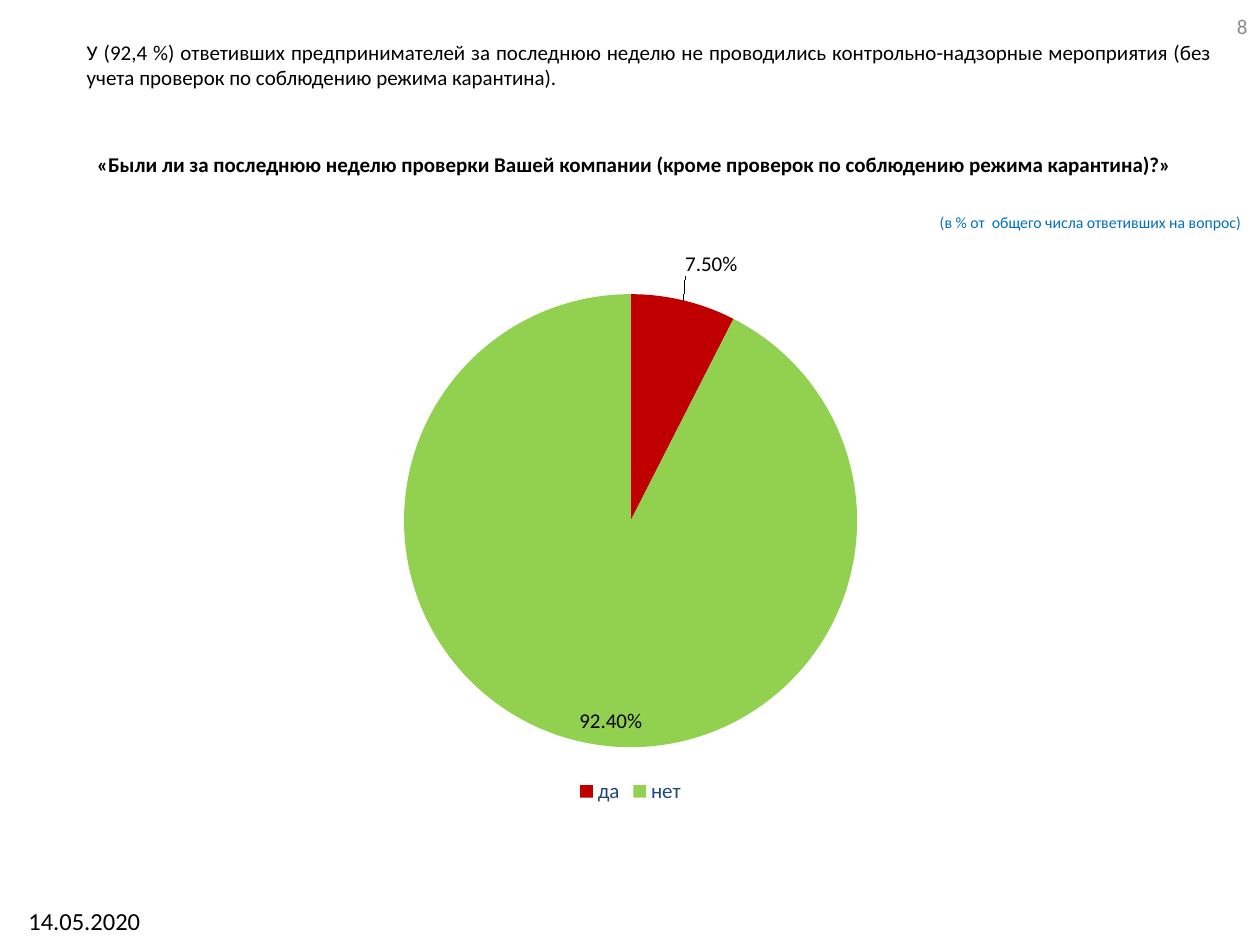
from dataclasses import dataclass

from lxml.etree import SubElement
from pptx import Presentation
from pptx.chart.data import CategoryChartData
from pptx.dml.color import RGBColor
from pptx.enum.chart import XL_CHART_TYPE, XL_LABEL_POSITION, XL_LEGEND_POSITION
from pptx.enum.text import MSO_ANCHOR, PP_ALIGN
from pptx.oxml import parse_xml
from pptx.oxml.ns import nsdecls, qn
from pptx.util import Pt

SCALE = 9144  # EMU per px, 100 px to the inch


@dataclass(frozen=True)
class Theme:
    face: str = "Calibri"
    ink: str = "000000"
    grey: str = "8C8C8C"
    blue: str = "0070C0"
    navy: str = "1F497D"
    red: str = "C00000"
    green: str = "92D050"
    small: int = 9
    body: int = 12
    large: int = 14


class Deck:
    def __init__(self, theme, wide, high):
        self.theme = theme
        self.file = Presentation()
        self.file.slide_width = wide * SCALE
        self.file.slide_height = high * SCALE
        self.slide = self.file.slides.add_slide(self.file.slide_layouts[6])

    def style(self, font, size, color, bold=False):
        form = {"name": self.theme.face, "size": Pt(size), "bold": bold}
        for name, value in form.items():
            setattr(font, name, value)
        font.color.rgb = RGBColor.from_string(color)

    def text(self, box, words, size, color, bold=False, wrap=True,
             align=PP_ALIGN.LEFT, anchor=MSO_ANCHOR.TOP, before=0):
        frame = self.slide.shapes.add_textbox(*(n * SCALE for n in box)).text_frame
        frame.word_wrap = wrap
        frame.vertical_anchor = anchor
        para = frame.paragraphs[0]
        para.alignment = align
        para.space_before = Pt(before)
        run = para.add_run()
        run.text = words
        self.style(run.font, size, color, bold)

    def layout(self, parent, index, **values):
        node = parse_xml(f"<c:layout {nsdecls('c')}><c:manualLayout/></c:layout>")
        for name, value in values.items():
            SubElement(node[0], qn(f"c:{name}")).set("val", str(value))
        parent.insert(index, node)

    def pie(self, box, slices, plot):
        look = self.theme
        data = CategoryChartData(number_format="0.00%")
        data.categories = [name for name, *_ in slices]
        data.add_series("Ответы", [value for _, value, *_ in slices])
        chart = self.slide.shapes.add_chart(
            XL_CHART_TYPE.PIE, *(n * SCALE for n in box), data).chart
        chart.has_title = False
        self.style(chart.font, look.body, look.ink)

        # Plot area
        area = chart.plots[0]
        area.vary_by_categories = True
        frame = chart._chartSpace.chart.plotArea
        for old in frame.findall(qn("c:layout")):
            frame.remove(old)
        self.layout(frame, 0, layoutTarget="inner", xMode="edge",
                    yMode="edge", **plot)

        # Slices and their labels
        series = area.series[0]
        tags = series.data_labels
        tags.show_value = True
        tags.number_format = "0.00%"
        tags.number_format_is_linked = False
        self.style(tags.font, look.body, look.ink)
        for spot, (_, _, color, place, lift) in enumerate(slices):
            point = series.points[spot]
            point.format.fill.solid()
            point.format.fill.fore_color.rgb = RGBColor.from_string(color)
            label = point.data_label
            label.position = place
            self.style(label.font, look.body, look.ink)
            if lift:
                self.layout(tags._element.findall(qn("c:dLbl"))[spot], 1, x=0, y=lift)

        # Legend
        chart.has_legend = True
        legend = chart.legend
        legend.position = XL_LEGEND_POSITION.BOTTOM
        legend.include_in_layout = False
        self.style(legend.font, look.body, look.navy)


def main():
    look = Theme()
    deck = Deck(look, 1000, 750)

    # Summary and question
    deck.text((59, 13, 913, 63),
              "У (92,4 %) ответивших предпринимателей за последнюю неделю не "
              "проводились контрольно-надзорные мероприятия (без учета проверок "
              "по соблюдению режима карантина).",
              look.body, look.ink, align=PP_ALIGN.JUSTIFY,
              anchor=MSO_ANCHOR.BOTTOM, before=2)
    deck.text((67, 115, 906, 40),
              "«Были ли за последнюю неделю проверки Вашей компании "
              "(кроме проверок по соблюдению режима карантина)?»",
              look.body, look.ink, bold=True, align=PP_ALIGN.JUSTIFY, before=2)
    deck.text((736, 164, 261, 25), "(в % от  общего числа ответивших на вопрос)",
              look.small, look.blue, wrap=False)

    # Answers
    deck.pie((167, 198, 667, 444),
             [("да", 0.075, look.red, XL_LABEL_POSITION.OUTSIDE_END, -0.03),
              ("нет", 0.924, look.green, XL_LABEL_POSITION.INSIDE_END, 0)],
             {"x": 0.23, "y": 0.08, "w": 0.54, "h": 0.81})

    # Page number and date
    deck.text((767, 1, 233, 40), "8", look.body, look.grey,
              align=PP_ALIGN.RIGHT, anchor=MSO_ANCHOR.MIDDLE)
    deck.text((0, 714, 134, 36), "14.05.2020", look.large, look.ink,
              align=PP_ALIGN.CENTER, before=3)

    deck.file.save("out.pptx")


if __name__ == "__main__":
    main()
